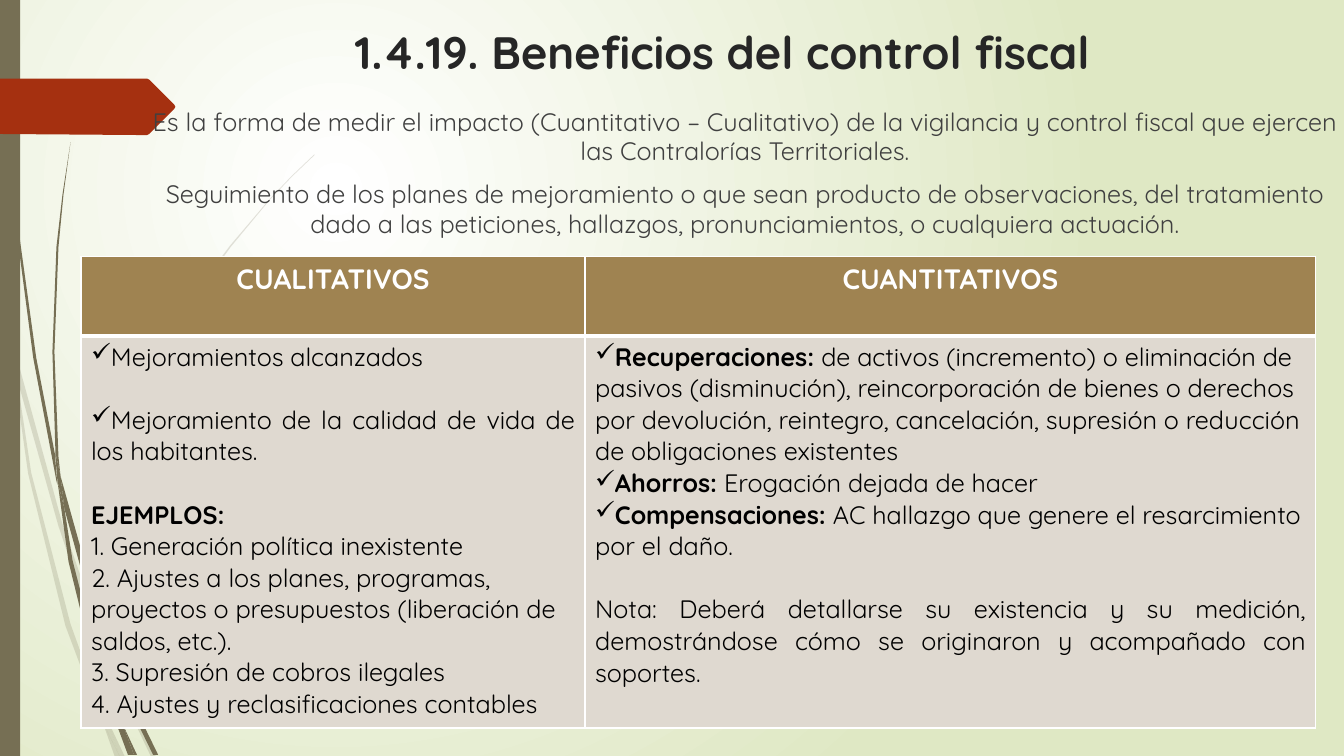
"""Build the slide on the benefits of fiscal control."""
from dataclasses import dataclass

from lxml import etree
from pptx import Presentation
from pptx import util as u
from pptx.dml.color import RGBColor
from pptx.enum import shapes, text
from pptx.oxml.ns import qn

OLIVE = RGBColor(0x76, 0x6F, 0x54)
RUST = RGBColor(0xA5, 0x30, 0x10)
WHITE = RGBColor(0xFF, 0xFF, 0xFF)
PALE_GREEN = RGBColor(0xDF, 0xE8, 0xC4)
TITLE_INK = RGBColor(0x26, 0x26, 0x26)
BODY_INK = RGBColor(0x40, 0x40, 0x40)
BLACK = RGBColor(0, 0, 0)
HEADER_FILL = RGBColor(0x9F, 0x83, 0x51)
CELL_FILL = RGBColor(0xDF, 0xD9, 0xD0)
FONT = "Quicksand"
GRID = u.Pt(0.72)
BLANK_LINE = 22.5
LEFT, CENTER, JUSTIFY = (text.PP_ALIGN.LEFT, text.PP_ALIGN.CENTER,
                         text.PP_ALIGN.JUSTIFY)


@dataclass
class Outline:
    points: list[tuple[float, float]]
    color: RGBColor = OLIVE
    alpha: int = 100


@dataclass
class Item:
    text: str
    lead: str = ""
    bullet: str = ""
    align: text.PP_ALIGN = LEFT
    before: float = 0


FAINT_WISPS = [
    [(11, 350), (9, 322), (0, 282), (0, 299), (10, 344)],
    [(58, 522), (84, 599), (85, 586), (62, 520), (14, 345), (17, 376)],
    [(92, 607), (88, 596), (88, 610), (123, 694), (150, 751), (155, 751),
     (127, 692)],
    [(119, 751), (124, 751), (105, 711)],
    [(93, 683), (70, 619), (31, 469), (17, 376), (11, 350), (28, 470),
     (65, 621), (92, 693), (101, 714), (99, 707)],
    [(84, 599), (87, 646), (93, 683), (96, 692), (105, 711), (103, 706),
     (91, 646), (88, 610), (88, 608)],
    [(88, 584), (93, 530), (110, 462), (132, 404), (160, 349), (192, 296),
     (229, 245), (268, 198), (290, 175), (312, 154), (312, 153), (289, 175),
     (268, 197), (228, 244), (190, 295), (158, 348), (130, 403), (107, 461),
     (90, 529), (85, 584), (85, 586), (88, 596)],
    [(101, 714), (114, 751), (119, 751)],
    [(88, 608), (88, 610), (88, 596), (85, 586), (84, 599)],
    [(96, 692), (93, 683), (99, 707), (101, 714), (119, 751), (105, 711)],
]
DARK_WISPS = [
    [(7, 110), (17, 233), (33, 355), (56, 477), (57, 481), (55, 457),
     (55, 453), (36, 355), (19, 232), (8, 109), (5, 48), (4, 0), (3, 0),
     (4, 48)],
    [(88, 592), (106, 645), (106, 633), (106, 631), (93, 590), (60, 472),
     (64, 505)],
    [(113, 649), (110, 641), (111, 656), (132, 708), (152, 749), (157, 749),
     (136, 706)],
    [(110, 691), (98, 657), (72, 556), (64, 505), (57, 477), (68, 557),
     (93, 659), (111, 708), (117, 722), (116, 717)],
    [(60, 472), (58, 453), (54, 349), (58, 245), (63, 193), (70, 141),
     (62, 193), (56, 245), (52, 349), (55, 449)],
    [(133, 749), (136, 749), (122, 719)],
    [(57, 477), (64, 505), (60, 472), (55, 449), (55, 453)],
    [(111, 633), (115, 592), (125, 552), (140, 513), (158, 476), (180, 440),
     (205, 406), (231, 374), (245, 359), (261, 344), (260, 344), (245, 358),
     (231, 373), (204, 405), (179, 439), (156, 474), (137, 512), (122, 551),
     (111, 591), (106, 631), (110, 641)],
    [(117, 722), (127, 749), (131, 749)],
    [(106, 645), (110, 691), (116, 706), (122, 719), (121, 716), (111, 656),
     (109, 651)],
    [(106, 645), (109, 651), (111, 656), (110, 641), (106, 631), (106, 633)],
    [(116, 706), (110, 691), (116, 717), (117, 722), (130, 749), (133, 749),
     (122, 719)],
]
SIDE_BAR = [(0, 0), (20, 0), (20, 750), (0, 750)]
ARROW = [(0, 78), (146, 78), (148, 79), (173, 104), (174, 106), (173, 108),
         (148, 133), (146, 134), (136, 134), (0, 133)]
DECOR = [*(Outline(points, alpha=20) for points in FAINT_WISPS),
         *(Outline(points) for points in DARK_WISPS)]

TITLE = [Item("1.4.19. Beneficios del control fiscal", align=CENTER)]
INTRO = [
    Item("Es la forma de medir el impacto (Cuantitativo – Cualitativo) de la vigilancia y control fiscal que ejercen las Contralorías Territoriales.", align=CENTER),
    Item("Seguimiento de los planes de mejoramiento o que sean producto de observaciones, del tratamiento dado a las peticiones, hallazgos, pronunciamientos, o cualquiera actuación.", align=CENTER, before=10),
]
HEADERS = [[Item("CUALITATIVOS", align=CENTER)],
           [Item("CUANTITATIVOS", align=CENTER)]]
QUALITATIVE = [
    Item("Mejoramientos alcanzados", bullet="✓", align=JUSTIFY),
    Item("Mejoramiento de la calidad de vida de los habitantes.", bullet="✓",
         align=JUSTIFY, before=BLANK_LINE),
    Item("", lead="EJEMPLOS:", align=JUSTIFY, before=BLANK_LINE),
    Item("1. Generación política inexistente"),
    Item("2. Ajustes a los planes, programas, proyectos o presupuestos (liberación de saldos, etc.)."),
    Item("3. Supresión de cobros ilegales"),
    Item("4. Ajustes y reclasificaciones contables"),
]
QUANTITATIVE = [
    Item("de activos (incremento) o eliminación de pasivos (disminución), reincorporación de bienes o derechos por devolución, reintegro, cancelación, supresión o reducción de obligaciones existentes", "Recuperaciones: ", "✓"),
    Item("Erogación dejada de hacer", "Ahorros: ", "✓"),
    Item("AC hallazgo que genere el resarcimiento por el daño.",
         "Compensaciones: ", "✓"),
    Item("Nota: Deberá detallarse su existencia y su medición, demostrándose cómo se originaron y acompañado con soportes.", align=JUSTIFY, before=BLANK_LINE),
]


def add_run(p, content: str, *, size: float, color: RGBColor, bold=False):
    r = p.add_run()
    r.text = content
    r.font.name, r.font.size, r.font.bold = FONT, u.Pt(size), bold
    r.font.color.rgb = color


def write_items(tf, items: list[Item], spacing=1.0, bold=False, **fmt):
    for i, item in enumerate(items):
        p = tf.paragraphs[0] if i == 0 else tf.add_paragraph()
        pPr = p._p.get_or_add_pPr()
        pPr.set("marL", "0")
        pPr.set("indent", "0")
        if item.bullet:
            etree.SubElement(pPr, qn("a:buChar")).set("char", item.bullet)
        else:
            etree.SubElement(pPr, qn("a:buNone"))
        p.alignment = item.align
        p.line_spacing = spacing
        p.space_before, p.space_after = u.Pt(item.before), u.Pt(0)
        if item.lead:
            add_run(p, item.lead, bold=True, **fmt)
        if item.text:
            add_run(p, item.text, bold=bold, **fmt)


def draw_outline(s, outline: Outline):
    builder = s.shapes.build_freeform(*outline.points[0], scale=GRID)
    builder.add_line_segments(outline.points[1:], close=True)
    paint(builder.convert_to_shape(), outline.color, outline.alpha)


def paint(sp, color: RGBColor, alpha: int = 100):
    sp.shadow.inherit = False
    sp.fill.solid()
    sp.fill.fore_color.rgb = color
    sp.line.fill.background()
    if alpha < 100:
        clr = sp._element.spPr.find(".//" + qn("a:srgbClr"))
        etree.SubElement(clr, qn("a:alpha")).set("val", str(alpha * 1000))


def paint_background(s):
    fill = s.background.fill
    fill.gradient()
    for stop, color in zip(fill.gradient_stops, (WHITE, PALE_GREEN)):
        stop.color.rgb = color
    lin = s._element.find(".//" + qn("a:lin"))
    circle = etree.Element(qn("a:path"), path="circle")
    etree.SubElement(circle, qn("a:fillToRect"), l="50000", t="50000",
                     r="100000", b="100000")
    lin.getparent().replace(lin, circle)


def place(s, sp, box: tuple[float, ...], items: list[Item], **fmt):
    s.shapes._spTree.append(sp._element)
    sp.left, sp.top, sp.width, sp.height = map(u.Pt, box)
    tf = sp.text_frame
    tf.word_wrap = True
    tf.auto_size = text.MSO_AUTO_SIZE.NONE
    tf.vertical_anchor = text.MSO_ANCHOR.TOP
    write_items(tf, items, **fmt)


def fill_cell(cell, items: list[Item], fill: RGBColor, top: float,
              bottom: float, **fmt):
    write_items(cell.text_frame, items, **fmt)
    cell.fill.solid()
    cell.fill.fore_color.rgb = fill
    tcPr = cell._tc.get_or_add_tcPr()
    for i, (side, width) in enumerate(zip("LRTB", (1, 1, top, bottom))):
        ln = etree.Element(qn(f"a:ln{side}"), w=str(u.Pt(width)))
        solid = etree.SubElement(ln, qn("a:solidFill"))
        etree.SubElement(solid, qn("a:srgbClr")).set("val", str(WHITE))
        tcPr.insert(i, ln)


def main():
    prs = Presentation()
    prs.slide_width, prs.slide_height = u.Pt(960), u.Pt(540)
    s = prs.slides.add_slide(prs.slide_layouts[1])
    paint_background(s)
    title, body = s.shapes.title, s.placeholders[1]
    for outline in DECOR:
        draw_outline(s, outline)
    bar = s.shapes.add_shape(shapes.MSO_SHAPE.RECTANGLE, 0, 0, u.Pt(14.4),
                             prs.slide_height)
    paint(bar, OLIVE)
    draw_outline(s, Outline(ARROW, RUST))
    place(s, title, (146, 13.7, 740, 60.5), TITLE, size=32.4,
          color=TITLE_INK, bold=True)
    place(s, body, (97.2, 73.4, 869.8, 109.4), INTRO, spacing=0.97, size=18,
          color=BODY_INK)
    table = s.shapes.add_table(2, 2, u.Pt(57.9), u.Pt(183), u.Pt(882),
                               u.Pt(337)).table
    table.horz_banding = False
    for column, width in zip(table.columns, (360, 522)):
        column.width = u.Pt(width)
    for row, height in zip(table.rows, (57, 280)):
        row.height = u.Pt(height)
    for col, items in enumerate(HEADERS):
        fill_cell(table.cell(0, col), items, HEADER_FILL, 1, 3, size=20,
                  color=WHITE, bold=True)
    for col, items in enumerate((QUALITATIVE, QUANTITATIVE)):
        fill_cell(table.cell(1, col), items, CELL_FILL, 3, 1, size=18,
                  color=BLACK)
    prs.save("out.pptx")


if __name__ == "__main__":
    main()
